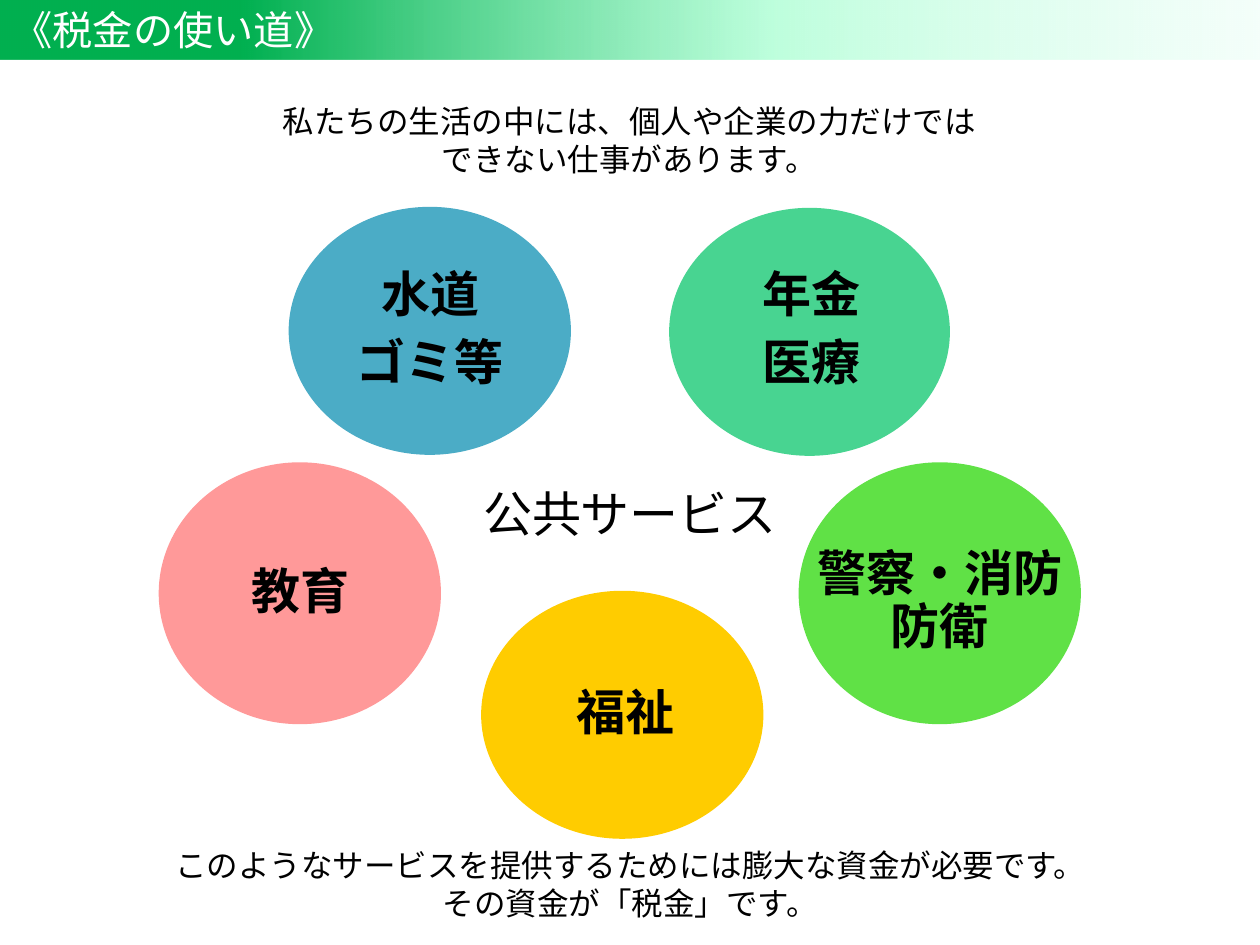
import pptx
import pptx.util
import pptx.dml.color
import pptx.enum.shapes
import pptx.enum.text
import pptx.oxml
import pptx.oxml.ns
from lxml import etree

Cm = pptx.util.Cm
Pt = pptx.util.Pt
SHAPE = pptx.enum.shapes.MSO_SHAPE
ALIGN = pptx.enum.text.PP_ALIGN
ANCHOR = pptx.enum.text.MSO_ANCHOR
qn = pptx.oxml.ns.qn

FONT = "Noto Sans CJK JP"
BLACK = "000000"
WHITE = "FFFFFF"

TITLE = "《税金の使い道》"
BANNER_STOPS = [(19, "00B050", 100), (61, "ABFFD3", 78), (100, "DBFFF0", 28)]
SERVICES = [
    (["水道", "ゴミ等"], "4BACC6", (5.82, 4.17, 5.69, 5.0), (6.65, 4.9, 4.04, 3.53)),
    (["教育"], "FF9999", (3.2, 9.32, 5.69, 5.28), (4.04, 10.11, 4.04, 3.73)),
    (["福祉"], "FFCC00", (9.7, 11.91, 5.69, 5.0), (10.59, 12.75, 4.04, 3.33)),
    (["年金", "医療"], "48D491", (13.49, 4.19, 5.66, 5.0), (14.38, 4.9, 3.94, 3.53)),
    (["警察・消防防衛"], "60E146", (16.1, 9.32, 5.69, 5.28), (16.1, 10.44, 5.69, 3.4)),
]
CENTER = (["公共サービス"], (9.45, 9.75, 6.5, 1.35))
NOTES = [
    (["私たちの生活の中には、個人や企業の力だけでは", "できない仕事があります。"],
     (4.19, 1.93, 16.99, 1.8)),
    (["このようなサービスを提供するためには膨大な資金が必要です。", "その資金が「税金」です。"],
     (3.23, 16.94, 18.95, 1.8)),
]


def rgb(value):
    return pptx.dml.color.RGBColor.from_string(value)


def write(tf, lines, size, color=BLACK, bold=False, align=ALIGN.CENTER, spaced=False):
    for i, line in enumerate(lines):
        p = tf.add_paragraph() if i else tf.paragraphs[0]
        p.alignment = align
        if spaced:
            p.line_spacing = 0.9
            p.space_after = Pt(8.5)
        r = p.add_run()
        r.text = line
        r.font.size = Pt(size)
        r.font.bold = bold
        r.font.color.rgb = rgb(color)
        r.font.name = FONT
        ea = etree.SubElement(r._r.get_or_add_rPr(), qn("a:ea"))
        ea.set("typeface", FONT)


def add_shape(shapes, kind, box):
    sp = shapes.add_shape(kind, *map(Cm, box))
    sp.shadow.inherit = False
    sp.line.fill.background()
    return sp


def add_text(shapes, box, wrap=True):
    tf = shapes.add_textbox(*map(Cm, box)).text_frame
    tf.word_wrap = wrap
    return tf


def add_service(s, lines, color, circle, label):
    group = s.shapes.add_group_shape()
    sp = add_shape(group.shapes, SHAPE.OVAL, circle)
    sp.fill.solid()
    sp.fill.fore_color.rgb = rgb(color)
    tf = add_text(group.shapes, label)
    tf.vertical_anchor = ANCHOR.MIDDLE
    tf.margin_left = tf.margin_right = tf.margin_top = tf.margin_bottom = Cm(0.05)
    write(tf, lines, 28, bold=True, spaced=True)


def add_banner(s):
    sp = add_shape(s.shapes, SHAPE.RECTANGLE, (0, 0, 25.4, 1.2))
    sp.fill.gradient()
    sp.fill.gradient_angle = 0
    stops = sp._element.spPr.find(".//" + qn("a:gsLst"))
    for stop in list(stops):
        stops.remove(stop)
    for position, color, alpha in BANNER_STOPS:
        gs = etree.SubElement(stops, qn("a:gs"), pos=str(position * 1000))
        clr = etree.SubElement(gs, qn("a:srgbClr"), val=color)
        etree.SubElement(clr, qn("a:alpha"), val=str(alpha * 1000))
    tf = sp.text_frame
    tf.vertical_anchor = ANCHOR.MIDDLE
    write(tf, [TITLE], 23, WHITE, align=ALIGN.LEFT)


def main():
    prs = pptx.Presentation()
    prs.slide_width, prs.slide_height = Cm(25.4), Cm(19.05)
    s = prs.slides.add_slide(prs.slide_layouts[6])
    for service in SERVICES:
        add_service(s, *service)
    lines, box = CENTER
    write(add_text(s.shapes, box, wrap=False), lines, 28, spaced=True)
    for lines, box in NOTES:
        write(add_text(s.shapes, box), lines, 18)
    add_banner(s)
    prs.save("out.pptx")


if __name__ == "__main__":
    main()
